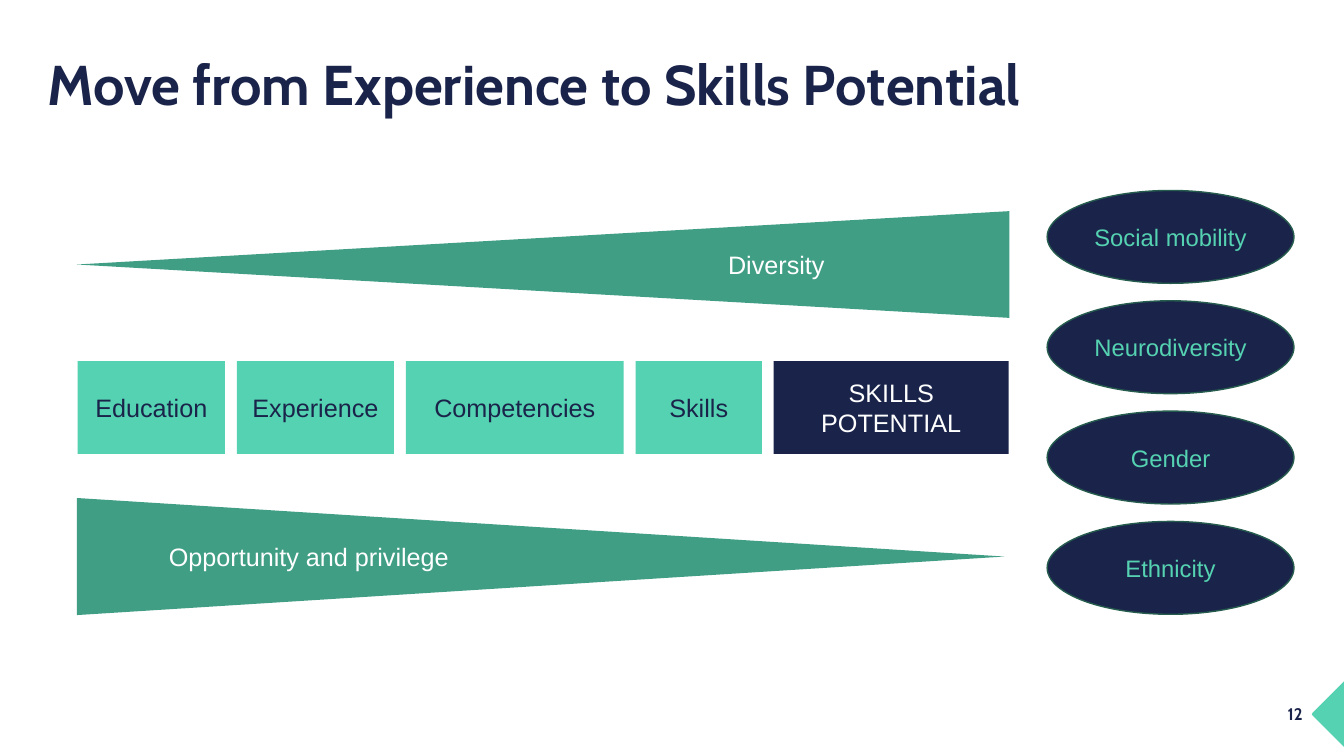
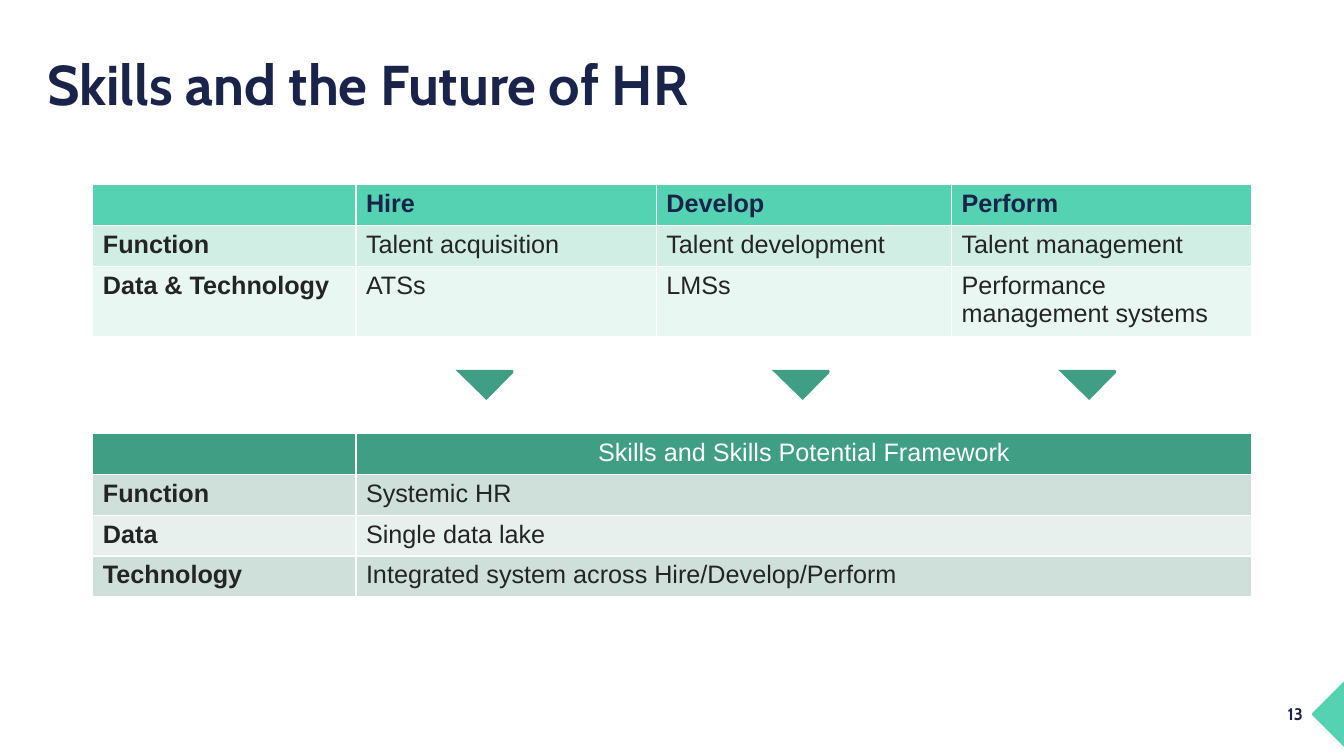
"""Build two slides on moving from experience to skills potential."""
from pptx import Presentation, util as u
from pptx.dml.color import RGBColor
from pptx.enum import shapes, text

NAVY, MINT, GREEN, WHITE, INK = "1A244A", "55D2B1", "409E85", "FFFFFF", "242424"
EDGE = "255C4E"
TITLE_FONT = {"name": "Cabin", "size": u.Pt(40), "bold": True}
NUMBER_FONT = {"name": "Cabin", "size": u.Pt(12), "bold": True}
BODY_FONT = {"name": "Arial", "size": u.Pt(18), "bold": False}
BUBBLE_FONT = {**BODY_FONT, "size": u.Pt(17)}
CORNER = [(0.81, 0), (0.81, 1.65), (0.02, 0.86), (0, 0.83), (0.02, 0.79)]
POINTER = [(0, 0), (1.43, 0), (1.46, 0.03), (1.45, 0.08), (0.78, 0.76)]


def colour(code):
    """Turn a hex string into a colour."""
    return RGBColor.from_string(code)


def apply(target, values):
    """Set each attribute named in a dict of format values."""
    for name, value in values.items():
        setattr(target, name, value)


def place(item, box):
    """Move an item to a box of left, top, width and height in cm."""
    apply(item, dict(zip(("left", "top", "width", "height"), map(u.Cm, box))))


def write(frame, words, font, code, align=text.PP_ALIGN.LEFT):
    """Write one formatted paragraph into a text frame."""
    para = frame.paragraphs[0]
    para.alignment = align
    span = para.add_run()
    span.text = words
    apply(span.font, font)
    span.font.color.rgb = colour(code)
    return para


def finish(shape, fill, line=None):
    """Give a shape a flat fill and an optional outline."""
    shape.shadow.inherit = False
    shape.fill.solid()
    shape.fill.fore_color.rgb = colour(fill)
    if line:
        shape.line.color.rgb = colour(line)
        shape.line.width = u.Pt(1)
    else:
        shape.line.fill.background()


def add_outline(page, left, top, points, fill):
    """Draw a closed outline whose points are relative to left and top."""
    spots = [(u.Cm(left + x), u.Cm(top + y)) for x, y in points]
    builder = page.shapes.build_freeform(*spots[0])
    builder.add_line_segments(spots[1:], close=True)
    finish(builder.convert_to_shape(), fill)


def add_label(page, kind, box, words, fill, code, font=BODY_FONT, line=None):
    """Add a preset shape with centred text."""
    shape = page.shapes.add_shape(kind, *map(u.Cm, box))
    finish(shape, fill, line)
    apply(shape.text_frame, {"word_wrap": True,
                             "vertical_anchor": text.MSO_ANCHOR.MIDDLE})
    write(shape.text_frame, words, font, code, text.PP_ALIGN.CENTER)
    return shape


def add_wedge(page, box, words, rotation, direction):
    """Add a triangle turned on its side that fills the box, with level text."""
    left, top, width, height = box
    upright = (left + (width - height) / 2, top + (height - width) / 2,
               height, width)
    wedge = add_label(page, shapes.MSO_SHAPE.ISOSCELES_TRIANGLE, upright,
                      words, GREEN, WHITE)
    wedge.rotation = rotation
    wedge.element.txBody.bodyPr.set("vert", direction)


def add_steps(page, box, steps, gap=0.3):
    """Lay out step boxes of given widths from left to right."""
    left, top, height = box
    for words, width, fill, code in steps:
        add_label(page, shapes.MSO_SHAPE.RECTANGLE, (left, top, width, height),
                  words, fill, code)
        left += width + gap


def add_bubbles(page, box, labels, gap=0.44):
    """Stack equal ellipses down the box."""
    left, top, width, height = box
    each = (height - gap * (len(labels) - 1)) / len(labels)
    for index, words in enumerate(labels):
        spot = (left, top + index * (each + gap), width, each)
        add_label(page, shapes.MSO_SHAPE.OVAL, spot, words, NAVY, MINT,
                  BUBBLE_FONT, EDGE)


def add_grid(page, left, top, widths, heights, rows, head, bands):
    """Add a table with a header row, bold first column and banded rows."""
    box = (left, top, sum(widths), sum(heights))
    table = page.shapes.add_table(len(rows), len(widths),
                                  *map(u.Cm, box)).table
    for column, width in zip(table.columns, widths):
        column.width = u.Cm(width)
    for row, height in zip(table.rows, heights):
        row.height = u.Cm(height)
    for r, row in enumerate(rows):
        for c, words in enumerate(row):
            cell = table.cell(r, c)
            cell.fill.solid()
            cell.fill.fore_color.rgb = colour(
                bands[(r - 1) % 2] if r else head["fill"])
            if words:
                bold = head["bold"] if r == 0 else c == 0
                write(cell.text_frame, words, {**BODY_FONT, "bold": bold},
                      INK if r else head["code"],
                      text.PP_ALIGN.LEFT if r else head["align"])


def add_page(deck, title, number):
    """Add a slide with its title, corner mark and page number."""
    page = deck.slides.add_slide(deck.slide_layouts[5])
    add_outline(page, 33.06, 17.17, CORNER, MINT)
    box = page.shapes.add_textbox(*map(u.Cm, (32.2, 17.6, 1.02, 1.27)))
    box.text_frame.word_wrap = True
    write(box.text_frame, str(number), NUMBER_FONT, NAVY)
    heading = page.shapes.title
    place(heading, (0.94, 1.19, 29.21, 2))
    apply(heading.text_frame, {"word_wrap": True,
                               "auto_size": text.MSO_AUTO_SIZE.NONE,
                               "vertical_anchor": text.MSO_ANCHOR.MIDDLE})
    write(heading.text_frame, title, TITLE_FONT, NAVY).line_spacing = 0.9
    return page


def build_potential(deck):
    """Build the slide that sets steps between two wedges."""
    page = add_page(deck, "Move from Experience to Skills Potential", 12)
    add_steps(page, (1.96, 9.1, 2.34), [
        ("Education", 3.71, MINT, NAVY),
        ("Experience", 3.96, MINT, NAVY),
        ("Competencies", 5.49, MINT, NAVY),
        ("Skills", 3.18, MINT, NAVY),
        ("SKILLS POTENTIAL", 5.92, NAVY, WHITE)])
    add_wedge(page, (1.94, 12.55, 23.37, 2.95), "Opportunity and privilege",
              90, "vert270")
    add_wedge(page, (1.94, 5.32, 23.5, 2.69), "Diversity", 270, "vert")
    add_bubbles(page, (26.39, 4.8, 6.22, 10.68),
                ["Social mobility", "Neurodiversity", "Gender", "Ethnicity"])


def build_future(deck):
    """Build the slide with two tables joined by pointers."""
    page = add_page(deck, "Skills and the Future of HR", 13)
    add_grid(page, 2.34, 4.65, [6.63, 7.57, 7.44, 7.57], [1.03, 1.03, 1.7], [
        ("", "Hire", "Develop", "Perform"),
        ("Function", "Talent acquisition", "Talent development",
         "Talent management"),
        ("Data & Technology", "ATSs", "LMSs",
         "Performance management systems")],
        {"fill": MINT, "code": NAVY, "bold": True,
         "align": text.PP_ALIGN.LEFT}, ("D1EEE4", "E9F7F2"))
    add_grid(page, 2.34, 10.92, [6.63, 22.58], [1.03] * 4, [
        ("", "Skills and Skills Potential Framework"),
        ("Function", "Systemic HR"),
        ("Data", "Single data lake"),
        ("Technology", "Integrated system across Hire/Develop/Perform")],
        {"fill": GREEN, "code": WHITE, "bold": False,
         "align": text.PP_ALIGN.CENTER}, ("CFDFD9", "E8F0ED"))
    for left in (11.48, 19.45, 26.67):
        add_outline(page, left, 9.32, POINTER, GREEN)


def main():
    """Build and save the deck."""
    deck = Presentation()
    apply(deck, {"slide_width": u.Cm(33.87), "slide_height": u.Cm(19.05)})
    build_potential(deck)
    build_future(deck)
    deck.save("out.pptx")


if __name__ == "__main__":
    main()
